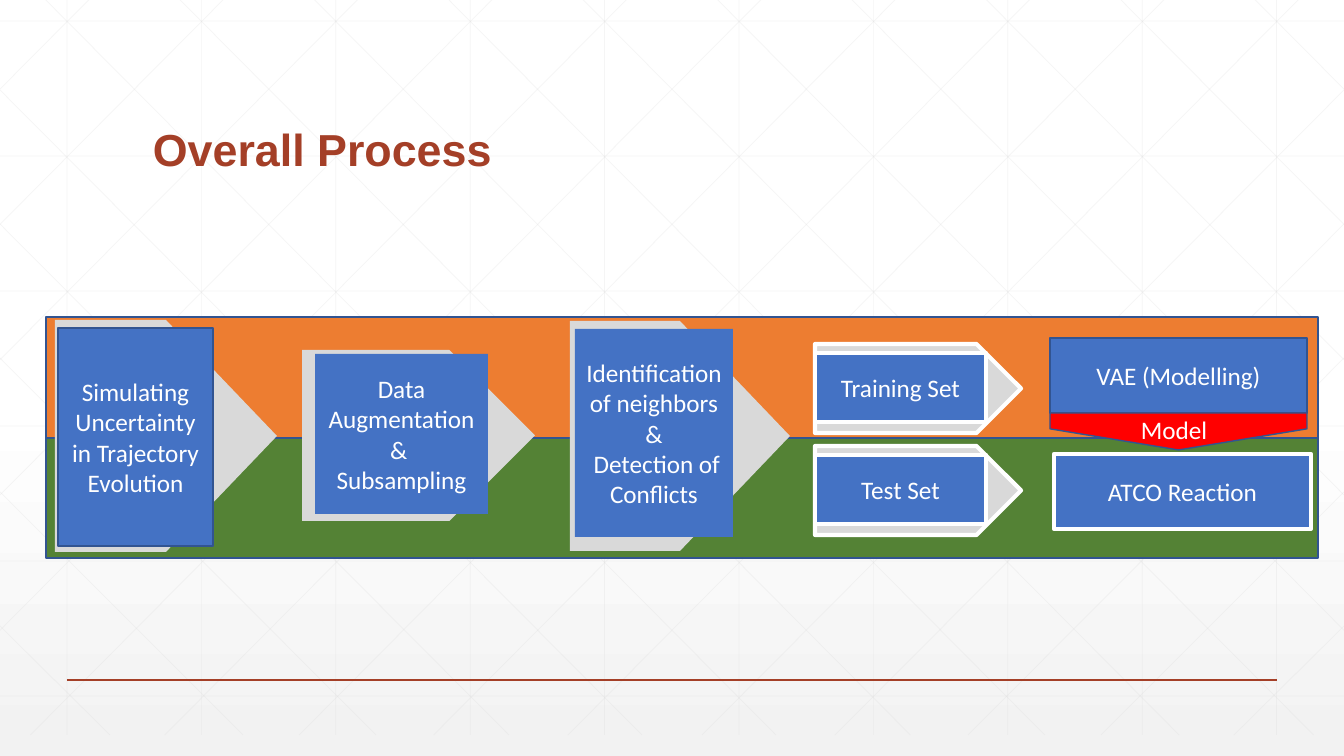
from lxml.etree import SubElement
from pptx import Presentation
from pptx.dml.color import RGBColor
from pptx.enum.shapes import MSO_CONNECTOR, MSO_SHAPE
from pptx.enum.text import MSO_ANCHOR, PP_ALIGN
from pptx.oxml.ns import qn
from pptx.util import Inches, Pt

PX = Inches(1) / 100.8
WIDTH, HEIGHT = 1344, 756

WHITE = RGBColor(0xFF, 0xFF, 0xFF)
PALE = RGBColor(0xF2, 0xF2, 0xF2)
GREY = RGBColor(0xD9, 0xD9, 0xD9)
RUST = RGBColor(0xA4, 0x3F, 0x27)
ORANGE = RGBColor(0xED, 0x7D, 0x31)
GREEN = RGBColor(0x54, 0x82, 0x35)
BLUE = RGBColor(0x44, 0x72, 0xC4)
NAVY = RGBColor(0x32, 0x54, 0x91)
RED = RGBColor(0xFF, 0x00, 0x00)

NAVY_EDGE = (NAVY, 1)
WHITE_EDGE = (WHITE, 3)


def px(length):
    return round(length * PX)


def add_line(page, start, end, color, width, alpha=None):
    line = page.shapes.add_connector(
        MSO_CONNECTOR.STRAIGHT, *(px(value) for value in (*start, *end)))
    line.line.color.rgb = color
    line.line.width = Pt(width)
    properties = line._element.spPr
    if alpha is not None:
        color_element = properties.find(".//" + qn("a:srgbClr"))
        SubElement(color_element, qn("a:alpha"), val=str(alpha * 1000))
    SubElement(properties, qn("a:effectLst"))


def format_text(frame, text, size, font, color, align=None, bold=False):
    frame.text = text
    for para in frame.paragraphs:
        para.alignment = align
        for span in para.runs:
            span.font.name = font
            span.font.size = Pt(size)
            span.font.bold = bold
            span.font.color.rgb = color


def add_box(page, frame, fill, edge=None, text="", kind=MSO_SHAPE.RECTANGLE):
    box = page.shapes.add_shape(kind, *(px(value) for value in frame))
    box.shadow.inherit = False
    box.fill.solid()
    box.fill.fore_color.rgb = fill
    if edge:
        box.line.color.rgb, box.line.width = edge[0], Pt(edge[1])
    else:
        box.line.fill.background()
    if text:
        box.text_frame.word_wrap = True
        box.text_frame.vertical_anchor = MSO_ANCHOR.MIDDLE
        format_text(box.text_frame, text, 18, "Calibri", WHITE, PP_ALIGN.CENTER)
    return box


def add_arrow(page, frame, fill, edge=None):
    return add_box(page, frame, fill, edge, kind=MSO_SHAPE.PENTAGON)


def add_label(page, frame, text, size, font, color, bold=False, wrap=False):
    label = page.shapes.add_textbox(*(px(value) for value in frame))
    label.text_frame.word_wrap = wrap
    format_text(label.text_frame, text, size, font, color, bold=bold)
    return label.text_frame


def add_mesh(page):
    top, bottom, pitch = -21, 735, 134.4
    lines = [((67 + pitch * i, top), (67 + pitch * i, bottom)) for i in range(10)]
    lines += [((0, 21 + 135 * i), (WIDTH, 21 + 135 * i)) for i in range(6)]

    # Diagonals from the top edge, cut at the slide side, then from the side
    diagonals = []
    for i in range(10):
        x = 25 + pitch * i
        run = min(751, WIDTH - x)
        diagonals.append(((x, top), (x + run, top + run * 756 / 751)))
    diagonals += [((0, 90 + 134 * i), (642 - 133 * i, bottom)) for i in range(5)]
    mirrored = [((WIDTH - x1, y1), (WIDTH - x2, y2))
                for (x1, y1), (x2, y2) in diagonals]

    for start, end in lines + diagonals + mirrored:
        add_line(page, start, end, GREY, 0.5, alpha=25)


def add_background(page):
    fill = page.background.fill
    fill.gradient()
    fill.gradient_angle = 270
    for stop, position, color in zip(fill.gradient_stops, (0.53, 1), (WHITE, PALE)):
        stop.position = position
        stop.color.rgb = color


def add_step(page, arrow, box, text, edge=None):
    add_arrow(page, arrow, GREY)
    add_box(page, box, BLUE, edge, text)


def main():
    deck = Presentation()
    deck.slide_width, deck.slide_height = px(WIDTH), px(HEIGHT)
    page = deck.slides.add_slide(deck.slide_layouts[6])

    # Backdrop and title
    add_background(page)
    add_mesh(page)
    add_line(page, (67, 680), (1277, 680), RUST, 1)
    title = add_label(page, (143, 55, 1058, 126), "Overall Process",
                      32, "Arial", RUST, bold=True, wrap=True)
    title.vertical_anchor = MSO_ANCHOR.BOTTOM
    title.paragraphs[0].line_spacing = 0.9

    # Training and test bands
    add_box(page, (46, 438, 1272, 120), GREEN, NAVY_EDGE)
    add_box(page, (46, 317, 1272, 121), ORANGE, NAVY_EDGE)

    # Data sets
    for top, name in ((344, "Training Set"), (446, "Test Set")):
        add_arrow(page, (815, top, 206, 89), GREY, WHITE_EDGE)
        add_box(page, (815, top + 9, 171, 69), BLUE, WHITE_EDGE, name)

    # Preparation steps
    add_step(page, (55, 320, 222, 232), (58, 328, 155, 218),
             "Simulating Uncertainty in Trajectory Evolution", NAVY_EDGE)
    add_step(page, (302, 350, 233, 171), (315, 354, 173, 160),
             "Data Augmentation & \nSubsampling")
    add_step(page, (570, 321, 220, 230), (575, 329, 158, 208),
             "Identification of neighbors\n&\n Detection of Conflicts")

    # Modelling and reaction
    add_box(page, (1054, 454, 257, 75), BLUE, WHITE_EDGE, "ATCO Reaction")
    add_box(page, (1050, 338, 257, 75), BLUE, NAVY_EDGE, "VAE (Modelling)")
    pointer = add_arrow(page, (1160, 303, 37, 257), RED, NAVY_EDGE)
    pointer.adjustments[0] = 0.57
    pointer.rotation = 90
    add_label(page, (1131, 409, 96, 40), "Model", 18, "Calibri", WHITE)

    deck.save("out.pptx")


if __name__ == "__main__":
    main()
